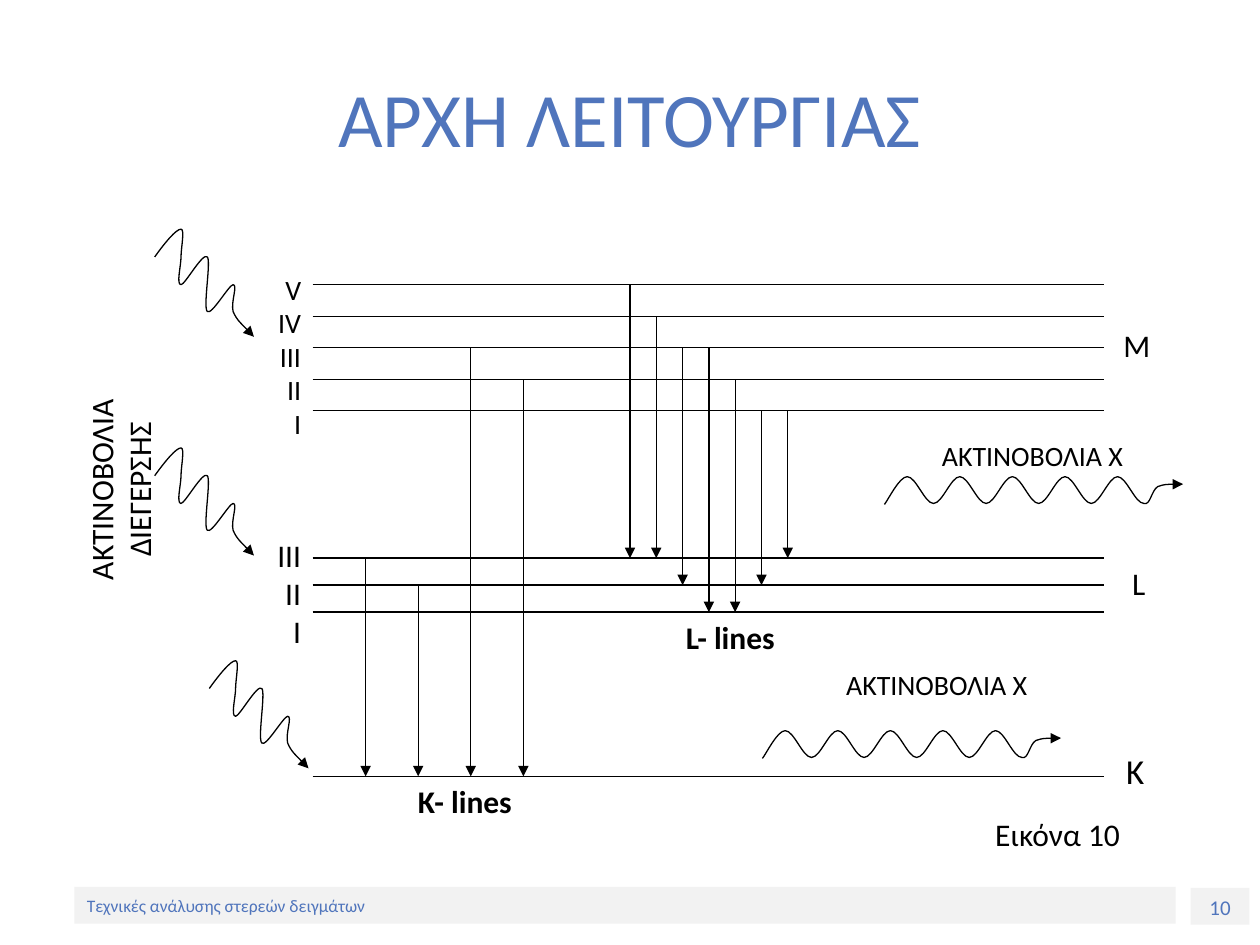
from dataclasses import dataclass

from lxml.etree import SubElement
from pptx import Presentation
from pptx.dml.color import RGBColor
from pptx.enum.shapes import MSO_CONNECTOR as Connector, MSO_SHAPE as Preset
from pptx.enum.text import MSO_ANCHOR as Anchor, PP_ALIGN as Align
from pptx.oxml.ns import qn
from pptx.util import Cm, Pt


@dataclass(frozen=True)
class Theme:
    font: str = "Calibri"
    accent: RGBColor = RGBColor(0x50, 0x75, 0xBC)
    ink: RGBColor = RGBColor(0, 0, 0)
    panel: RGBColor = RGBColor(0xF2, 0xF2, 0xF2)
    paper: RGBColor = RGBColor(0xFF, 0xFF, 0xFF)
    stroke: float = 0.75
    title: int = 44
    shell: int = 20
    label: int = 18
    sublevel: int = 16
    page: int = 12
    footer: int = 10


theme = Theme()


def write(frame, lines, size, align, anchor=Anchor.TOP, color=theme.ink, bold=False):
    frame.word_wrap = True
    frame.vertical_anchor = anchor
    frame.text = "\n".join(lines)
    font_format = {"name": theme.font, "size": Pt(size), "bold": bold}
    for paragraph in frame.paragraphs:
        paragraph.alignment = align
        for attribute, value in font_format.items():
            setattr(paragraph.font, attribute, value)
        paragraph.font.color.rgb = color


def ink_line(mark, arrow=False):
    mark.line.color.rgb = theme.ink
    mark.line.width = Pt(theme.stroke)
    properties = mark._element.spPr
    if arrow:
        SubElement(properties.find(qn("a:ln")), qn("a:tailEnd"), type="triangle")
    SubElement(properties, qn("a:effectLst"))


deck = Presentation()
deck.slide_width, deck.slide_height = Cm(25.4), Cm(19.05)
slide = deck.slides.add_slide(deck.slide_layouts[5])
shapes = slide.shapes

title = shapes.title
title_place = {"left": 1.27, "top": 0.76, "width": 22.86, "height": 3.18}
for attribute, value in title_place.items():
    setattr(title, attribute, Cm(value))
write(title.text_frame, ["ΑΡΧΗ ΛΕΙΤΟΥΡΓΙΑΣ"], theme.title, Align.CENTER,
      Anchor.MIDDLE, theme.accent)

level_start, level_end = 6.3, 22.25
levels = {f"M{5 - i}": 5.74 + 0.635 * i for i in range(5)}
levels |= {f"L{3 - i}": 11.25 + 0.545 * i for i in range(3)}
levels["K"] = 15.65
for y in levels.values():
    ink_line(shapes.add_connector(
        Connector.STRAIGHT, Cm(level_start), Cm(y), Cm(level_end), Cm(y)))

transitions = [
    (7.37, 1.06, [("L3", "K"), ("L2", "K"), ("M3", "K"), ("M2", "K")]),
    (12.7, 0.53, [("M5", "L3"), ("M4", "L3"), ("M3", "L2"), ("M3", "L1"),
                  ("M2", "L1"), ("M1", "L2"), ("M1", "L3")]),
]
for first_x, gap, jumps in transitions:
    for i, (upper, lower) in enumerate(jumps):
        x = Cm(first_x + gap * i)
        ink_line(shapes.add_connector(
            Connector.STRAIGHT, x, Cm(levels[upper]), x, Cm(levels[lower])), arrow=True)

excitation = [
    (0.2, -0.28), (0.43, -0.56), (0.53, -0.56),
    (0.61, -0.56), (0.53, -0.18), (0.53, 0),
    (0.53, 0.18), (0.43, 0.56), (0.53, 0.56),
    (0.61, 0.56), (0.97, -0.1), (1.06, 0),
    (1.14, 0.08), (0.97, 1.02), (1.06, 1.1),
    (1.14, 1.19), (1.5, 0.56), (1.58, 0.56),
    (1.68, 0.56), (1.53, 0.91), (1.58, 1.1),
    (1.65, 1.27), (1.9, 1.5), (2, 1.61),
]
crest, trough, half_wave = -0.56, -0.02, 0.53
emission = [(0.08, -0.1), (0.3, crest), (0.46, crest)]
for i in range(9):
    x = 0.46 + half_wave * i
    before, after = (crest, trough) if i % 2 == 0 else (trough, crest)
    emission += [(x + half_wave / 3, before), (x + half_wave * 2 / 3, after),
                 (x + half_wave, after)]
emission += [(5.36, 0.03), (5.38, -0.28), (5.51, -0.36),
             (5.64, -0.41), (5.84, -0.41), (6.02, -0.41)]

waves = [
    (3.12, 5.18, excitation),
    (3.12, 9.59, excitation),
    (4.22, 13.88, excitation),
    (15.37, 15.29, emission),
    (17.83, 10.17, emission),
]
for x, y, curve in waves:
    builder = shapes.build_freeform(Cm(x), Cm(y))
    builder.add_line_segments([(Cm(x + dx), Cm(y + dy)) for dx, dy in curve], close=False)
    wave = builder.convert_to_shape()
    wave.fill.background()
    outline = next(wave._element.iter(qn("a:path")))
    segments = outline.findall(qn("a:lnTo"))
    for i in range(0, len(segments), 3):
        bezier = SubElement(outline, qn("a:cubicBezTo"))
        for segment in segments[i:i + 3]:
            bezier.append(segment[0])
            outline.remove(segment)
    ink_line(wave, arrow=True)

labels = [
    (4.72, 5.36, 1.6, 3.3, ["V", "IV", "III", "II", "I"], theme.sublevel, False),
    (4.72, 10.69, 1.6, 2.21, ["III", "II", "I"], theme.label, False),
    (21.84, 6.45, 1.6, 1.09, ["M"], theme.label, False),
    (21.74, 11.25, 1.6, 1.09, ["L"], theme.label, False),
    (21.72, 14.99, 1.6, 1.09, ["K"], theme.shell, False),
    (18.11, 8.71, 4.78, 1.09, ["ΑΚΤΙΝΟΒΟΛΙΑ Χ"], theme.sublevel, False),
    (16.18, 13.34, 4.78, 1.09, ["ΑΚΤΙΝΟΒΟΛΙΑ Χ"], theme.sublevel, False),
    (7.37, 15.65, 3.2, 1.09, ["K- lines"], theme.label, True),
    (12.67, 12.34, 3.2, 1.09, ["L- lines"], theme.label, True),
]
for x, y, width, height, lines, size, bold in labels:
    label = shapes.add_textbox(Cm(x), Cm(y), Cm(width), Cm(height))
    write(label.text_frame, lines, size, Align.RIGHT, bold=bold)

source_label = shapes.add_textbox(Cm(-0.15), Cm(9.07), Cm(4.95), Cm(1.6))
source_label.rotation = 270
write(source_label.text_frame, ["ΑΚΤΙΝΟΒΟΛΙΑ ΔΙΕΓΕΡΣΗΣ"], theme.label, Align.CENTER)

panels = [
    (19.81, 16.21, 3.2, 1.19, "Εικόνα 10", theme.label, Align.LEFT, Anchor.MIDDLE,
     theme.ink, theme.paper),
    (1.5, 17.88, 22.2, 0.74, "Τεχνικές ανάλυσης στερεών δειγμάτων", theme.footer,
     Align.LEFT, Anchor.MIDDLE, theme.accent, theme.panel),
    (24, 17.9, 1.19, 0.74, "10", theme.page, Align.CENTER, Anchor.TOP,
     theme.accent, theme.panel),
]
for x, y, width, height, text, size, align, anchor, color, fill in panels:
    panel = shapes.add_shape(Preset.RECTANGLE, Cm(x), Cm(y), Cm(width), Cm(height))
    panel.shadow.inherit = False
    panel.fill.solid()
    panel.fill.fore_color.rgb = fill
    panel.line.fill.background()
    write(panel.text_frame, [text], size, align, anchor, color)

deck.save("out.pptx")
